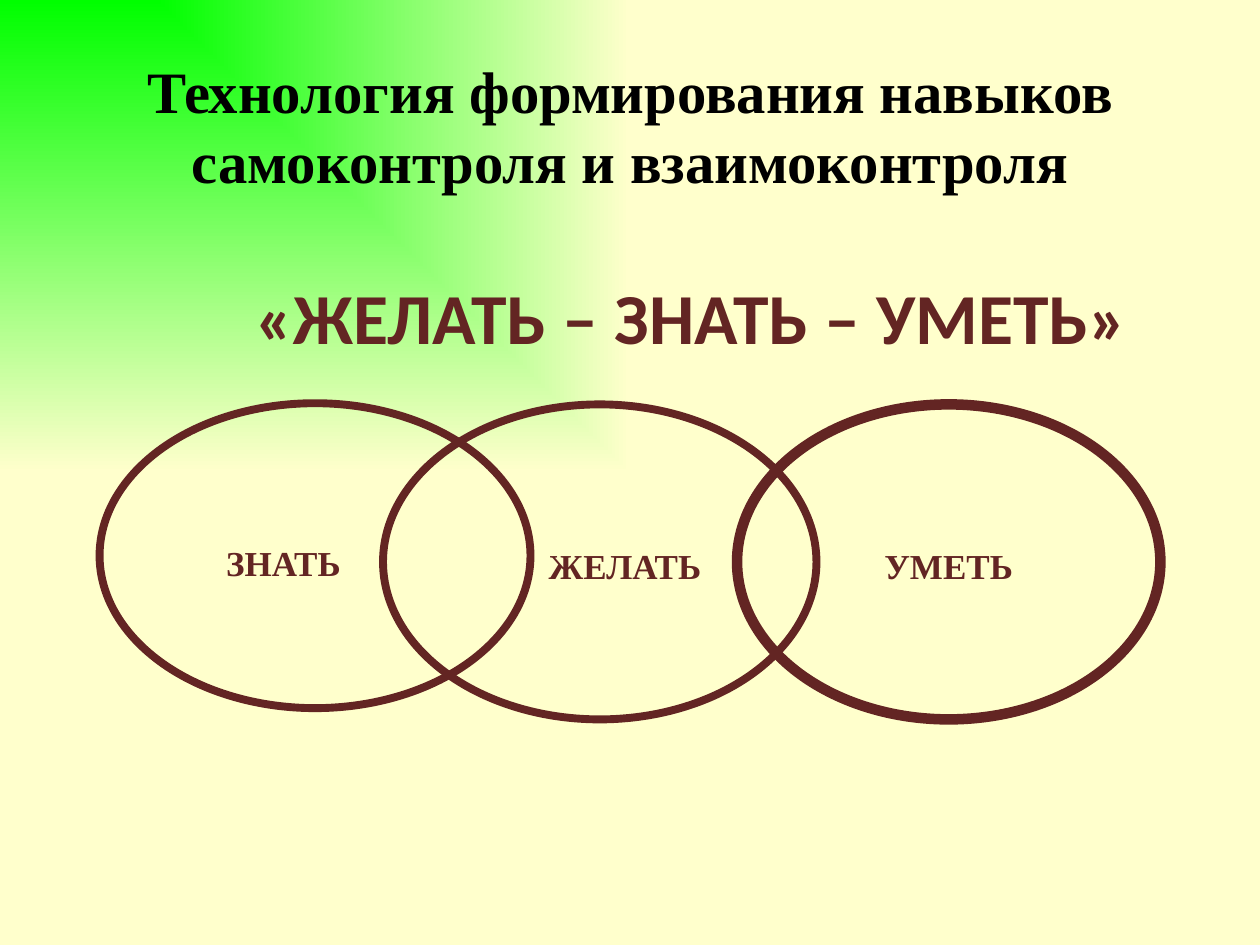
from lxml import etree
from pptx import Presentation
from pptx.dml.color import RGBColor
from pptx.enum.shapes import MSO_SHAPE
from pptx.enum.text import MSO_ANCHOR, PP_ALIGN
from pptx.oxml.ns import qn
from pptx.util import Inches, Pt

OVAL, MIDDLE, CENTER = MSO_SHAPE.OVAL, MSO_ANCHOR.MIDDLE, PP_ALIGN.CENTER
BROWN, BLACK = "632523", "000000"
GRADIENT = [(0, "00FF00"), (1, "FFFFCC")]
TITLE = ("Технология формирования навыков самоконтроля и взаимоконтроля",
         (0.5, 0.4, 9, 1.18), ("Times New Roman", 33.5, BLACK))
MOTTO = ("«ЖЕЛАТЬ – ЗНАТЬ – УМЕТЬ»",
         (1.49, 2.11, 8, 0.8), ("Calibri", 41, BROWN))
LABEL_FONT = ("Times New Roman", 20, BROWN)
# label, box, line width, label shift from the centre
CIRCLES = [
    ("ЖЕЛАТЬ", (3.04, 3.21, 3.44, 2.5), 4.5, (0.2, 0.03)),
    ("УМЕТЬ", (5.85, 3.21, 3.36, 2.5), 6, (0, 0.03)),
    ("ЗНАТЬ", (0.79, 3.2, 3.42, 2.42), 4.5, (-0.25, 0.05)),
]


def rgb(value):
    """Turn a hex string into a colour."""
    return RGBColor.from_string(value)


def write(sp, text, font, shift=(0, 0)):
    """Write one bold centred paragraph, moved by uneven margins."""
    name, size, color = font
    dx, dy = shift
    tf = sp.text_frame
    frame = {
        "word_wrap": True, "vertical_anchor": MIDDLE,
        "margin_left": Inches(0.1 + max(2 * dx, 0)),
        "margin_right": Inches(0.1 + max(-2 * dx, 0)),
        "margin_top": Inches(0.05 + 2 * dy), "margin_bottom": Inches(0.05),
    }
    for key, value in frame.items():
        setattr(tf, key, value)
    p = tf.paragraphs[0]
    p.alignment = CENTER
    r = p.add_run()
    r.text = text
    for key, value in {"name": name, "size": Pt(size), "bold": True}.items():
        setattr(r.font, key, value)
    r.font.color.rgb = rgb(color)


def paint_background(s):
    """Fill the background with a gradient spreading from the top left."""
    fill = s.background.fill
    fill.gradient()
    for stop, (position, color) in zip(fill.gradient_stops, GRADIENT):
        stop.position = position
        stop.color.rgb = rgb(color)
    grad = next(s.element.iter(qn("a:gradFill")))
    grad.remove(grad.find(qn("a:lin")))
    shade = etree.Element(qn("a:path"), path="rect")
    etree.SubElement(shade, qn("a:fillToRect"), r="100000", b="100000")
    grad.find(qn("a:gsLst")).addnext(shade)


def main():
    """Build the slide and save it."""
    prs = Presentation()
    prs.slide_width, prs.slide_height = Inches(10), Inches(7.5)
    s = prs.slides.add_slide(prs.slide_layouts[5])
    paint_background(s)

    text, box, font = TITLE
    title = s.shapes.title
    for key, value in zip(("left", "top", "width", "height"), box):
        setattr(title, key, Inches(value))
    write(title, text, font)

    text, box, font = MOTTO
    write(s.shapes.add_textbox(*map(Inches, box)), text, font)

    group = s.shapes.add_group_shape()
    for label, box, width, shift in CIRCLES:
        sp = group.shapes.add_shape(OVAL, *map(Inches, box))
        sp.shadow.inherit = False
        sp.fill.background()
        sp.line.color.rgb = rgb(BROWN)
        sp.line.width = Pt(width)
        write(sp, label, LABEL_FONT, shift)

    prs.save("out.pptx")


if __name__ == "__main__":
    main()
